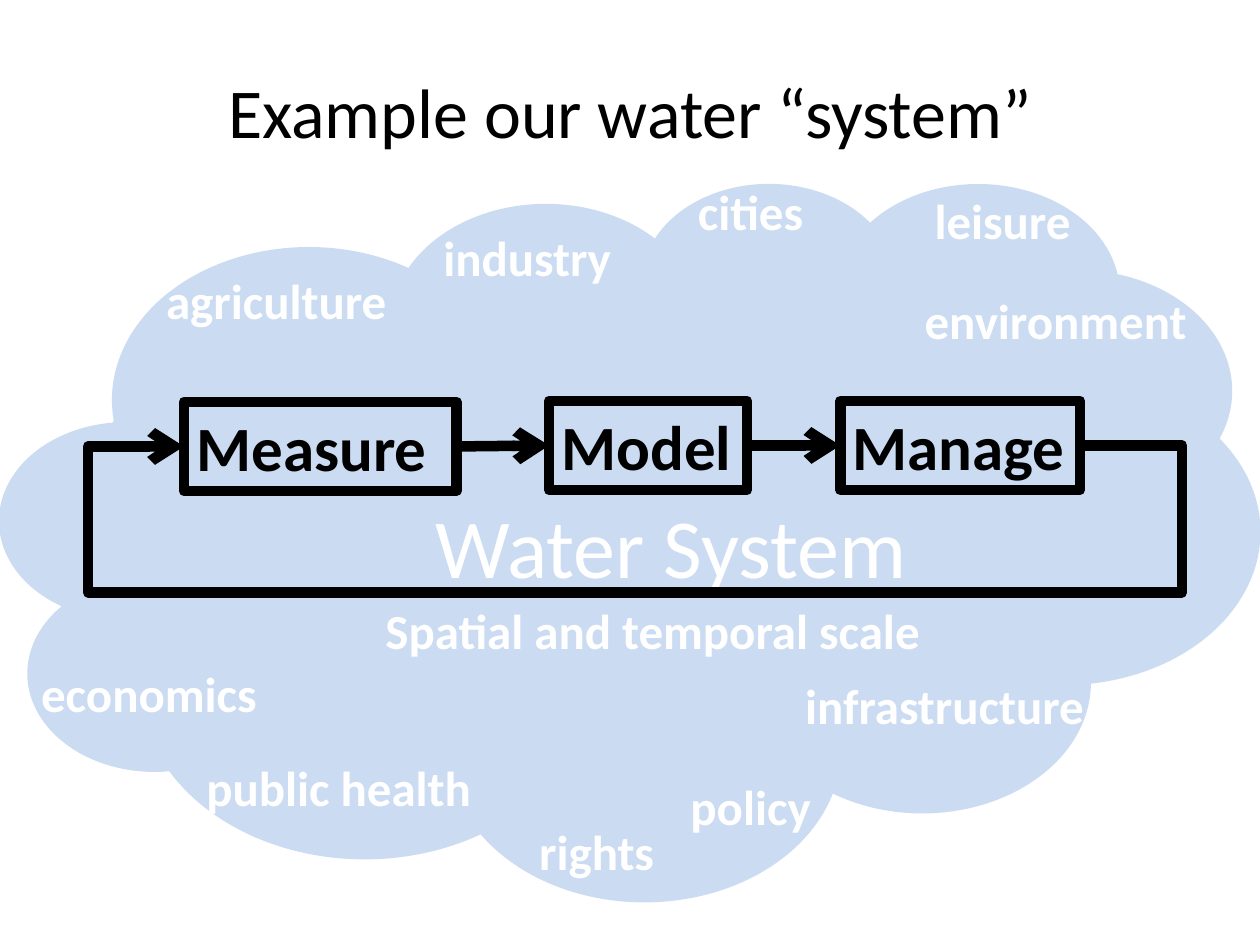
from lxml import etree
from pptx import Presentation
from pptx.dml.color import RGBColor
from pptx.enum.shapes import MSO_CONNECTOR, MSO_SHAPE
from pptx.enum.text import MSO_ANCHOR, MSO_AUTO_SIZE, PP_ALIGN
from pptx.oxml.ns import qn
from pptx.util import Cm, Pt

STRAIGHT, ELBOW = MSO_CONNECTOR.STRAIGHT, MSO_CONNECTOR.ELBOW
CLOUD, RECTANGLE = MSO_SHAPE.CLOUD, MSO_SHAPE.RECTANGLE
MIDDLE, CENTER, LEFT = MSO_ANCHOR.MIDDLE, PP_ALIGN.CENTER, PP_ALIGN.LEFT
LEFT_SIDE, RIGHT_SIDE = 1, 3

COLORS = {"cloud": "558ED5", "light": "FFFFFF", "dark": "000000"}
FONT = "Calibri"
LINE_WIDTH = Pt(6)
BOX_HEIGHT = 1.8
LABEL_HEIGHT = 1.45

# Text, left, top, width (cm)
LABELS = [
    ("agriculture", 3.1, 5.33, 5.0),
    ("industry", 8.69, 4.47, 3.94),
    ("cities", 13.82, 3.53, 2.67),
    ("environment", 18.39, 5.74, 5.84),
    ("leisure", 18.59, 3.71, 3.28),
    ("public health", 3.91, 15.14, 5.92),
    ("rights", 10.62, 16.43, 2.84),
    ("policy", 13.67, 15.52, 2.97),
    ("economics", 0.58, 13.26, 4.9),
    ("infrastructure", 15.98, 13.49, 6.2),
    ("Spatial and temporal scale", 7.52, 11.99, 11.43),
]
# The first box sits a hair lower, so the feedback loop has a height to scale
STEPS = [
    ("Measure", 3.71, 8.1, 5.49),
    ("Model", 11.07, 8.08, 3.99),
    ("Manage", 16.94, 8.08, 4.83),
]


def color(name):
    return RGBColor.from_string(COLORS[name])


def write(shape, text, size, tone, bold=False, align=LEFT):
    paragraph = shape.text_frame.paragraphs[0]
    paragraph.text = text
    paragraph.alignment = align
    font = paragraph.font
    font.name, font.size, font.bold = FONT, Pt(size), bold
    font.color.rgb = color(tone)


def add_cloud(slide):
    cloud = slide.shapes.add_shape(CLOUD, 0, Cm(3.66), Cm(25.4), Cm(14.48))
    cloud.shadow.inherit = False
    cloud.fill.solid()
    cloud.fill.fore_color.rgb = color("cloud")
    fill_color = cloud.fill._xPr.find(qn("a:solidFill"))[0]
    etree.SubElement(fill_color, qn("a:alpha"), val="30000")
    cloud.line.fill.background()
    frame = cloud.text_frame
    frame.word_wrap = True
    frame.vertical_anchor = MIDDLE
    # Insets push the caption right and down, below the boxes
    frame.margin_left, frame.margin_top = Cm(3.71), Cm(0.95)
    write(cloud, "Water System", 48, "light", align=CENTER)


def add_title(slide, text):
    title = slide.shapes.add_textbox(Cm(1.27), 0, Cm(22.86), Cm(4.47))
    title.text_frame.word_wrap = True
    title.text_frame.vertical_anchor = MIDDLE
    write(title, text, 40, "dark", align=CENTER)


def add_label(slide, text, left, top, width):
    label = slide.shapes.add_textbox(Cm(left), Cm(top), Cm(width), Cm(LABEL_HEIGHT))
    label.text_frame.word_wrap = False
    label.text_frame.auto_size = MSO_AUTO_SIZE.SHAPE_TO_FIT_TEXT
    write(label, text, 28, "light", bold=True)


def add_step(slide, text, left, top, width):
    step = slide.shapes.add_shape(RECTANGLE, Cm(left), Cm(top), Cm(width), Cm(BOX_HEIGHT))
    step.shadow.inherit = False
    step.fill.background()
    step.line.color.rgb = color("dark")
    step.line.width = LINE_WIDTH
    step.text_frame.word_wrap = True
    step.text_frame.margin_right = 0
    write(step, text, 36, "dark", bold=True)
    return step


def add_arrow(slide, kind, source, target):
    arrow = slide.shapes.add_connector(kind, 0, 0, 0, 0)
    arrow.begin_connect(source, RIGHT_SIDE)
    arrow.end_connect(target, LEFT_SIDE)
    arrow.line.color.rgb = color("dark")
    arrow.line.width = LINE_WIDTH
    etree.SubElement(arrow.line._get_or_add_ln(), qn("a:tailEnd"), type="arrow")
    etree.SubElement(arrow._element.spPr, qn("a:effectLst"))
    return arrow


def add_feedback(slide, source, target):
    """Loop out to the right, under the boxes and back in from the left."""
    loop = add_arrow(slide, ELBOW, source, target)
    right, bottom, left = Cm(23.83), Cm(11.94), Cm(1.78)
    bends = [
        (loop.begin_x - right) / loop.width,
        (bottom - loop.begin_y) / loop.height,
        (loop.begin_x - left) / loop.width,
    ]
    geometry = loop._element.spPr.find(qn("a:prstGeom"))
    geometry.set("prst", "bentConnector5")
    guides = geometry.find(qn("a:avLst"))
    for number, bend in enumerate(bends, 1):
        etree.SubElement(guides, qn("a:gd"), name=f"adj{number}",
                         fmla=f"val {round(bend * 100000)}")


def main():
    prs = Presentation()
    prs.slide_width, prs.slide_height = Cm(25.4), Cm(19.05)
    slide = prs.slides.add_slide(prs.slide_layouts[6])

    # Background cloud and title
    add_cloud(slide)
    add_title(slide, "Example our water “system”")

    # Management cycle
    steps = [add_step(slide, *step) for step in STEPS]
    for source, target in zip(steps, steps[1:]):
        add_arrow(slide, STRAIGHT, source, target)
    add_feedback(slide, steps[-1], steps[0])

    # Concerns around the cycle
    for label in LABELS:
        add_label(slide, *label)

    prs.save("out.pptx")


if __name__ == "__main__":
    main()
